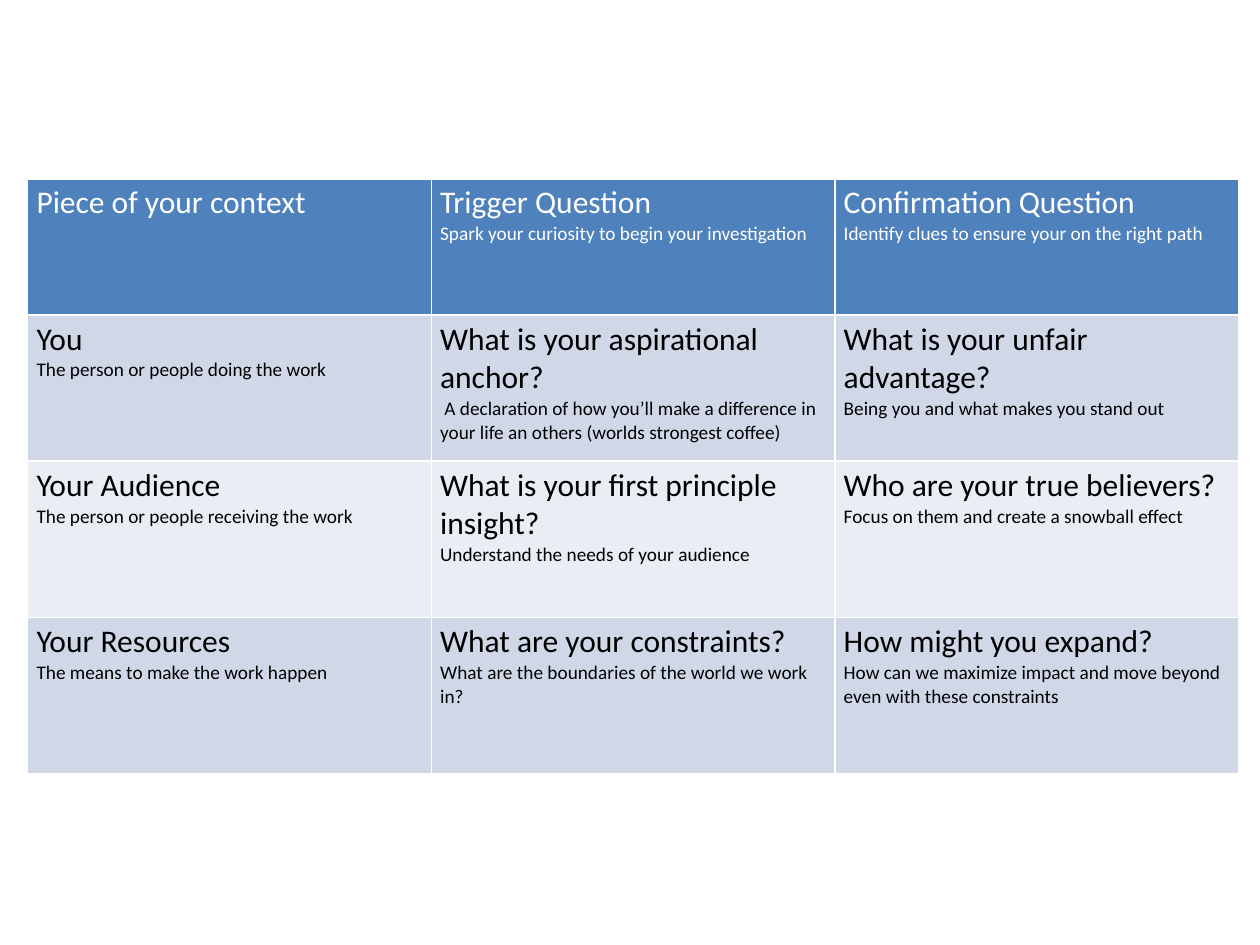
from lxml.etree import SubElement
from pptx import Presentation
from pptx.dml.color import RGBColor
from pptx.oxml.ns import qn
from pptx.util import Inches, Pt

HEAD, DARK, LIGHT = "4F81BD", "D0D8E8", "E9EDF4"
WHITE, BLACK = "FFFFFF", "000000"
ROWS = [
    (1.08, HEAD, WHITE, [
        ["Piece of your context"],
        ["Trigger Question", "Spark your curiosity to begin your investigation"],
        ["Confirmation Question", "Identify clues to ensure your on the right path"],
    ]),
    (1.16, DARK, BLACK, [
        ["You", "The person or people doing the work"],
        ["What is your aspirational anchor?",
         " A declaration of how you’ll make a difference in your life an others (worlds strongest coffee)"],
        ["What is your unfair advantage?", "Being you and what makes you stand out"],
    ]),
    (1.24, LIGHT, BLACK, [
        ["Your Audience", "The person or people receiving the work"],
        ["What is your first principle insight?", "Understand the needs of your audience"],
        ["Who are your true believers?", "Focus on them and create a snowball effect"],
    ]),
    (1.24, DARK, BLACK, [
        ["Your Resources", "The means to make the work happen"],
        ["What are your constraints?", "What are the boundaries of the world we work in?"],
        ["How might you expand?",
         "How can we maximize impact and move beyond even with these constraints"],
    ]),
]
MARGINS = {
    "margin_left": Inches(0.07), "margin_right": Inches(0.07),
    "margin_top": Inches(0.04), "margin_bottom": Inches(0.04),
}
SIZES = (18, 11)


def color(value):
    return RGBColor.from_string(value)


def apply(target, values):
    for name, value in values.items():
        setattr(target, name, value)


def add_lines(cell):
    props = cell._tc.get_or_add_tcPr()
    for side in "LRTB":
        line = SubElement(props, qn("a:ln" + side), w=str(Pt(1)))
        fill = SubElement(line, qn("a:solidFill"))
        SubElement(fill, qn("a:srgbClr"), val=WHITE)


def fill_cell(cell, texts, back, ink):
    apply(cell, MARGINS)
    add_lines(cell)
    cell.fill.solid()
    cell.fill.fore_color.rgb = color(back)
    frame = cell.text_frame
    frame.text = "\n".join(texts)
    for para, size in zip(frame.paragraphs, SIZES):
        font = para.runs[0].font
        apply(font, {"name": "Calibri", "size": Pt(size), "bold": False})
        font.color.rgb = color(ink)


def add_grid(slide, left, top, width, height):
    count = len(ROWS[0][3])
    table = slide.shapes.add_table(len(ROWS), count, left, top, width, height).table
    for column in table.columns:
        column.width = width // count
    for index, (tall, back, ink, cells) in enumerate(ROWS):
        table.rows[index].height = Inches(tall)
        for place, texts in enumerate(cells):
            fill_cell(table.cell(index, place), texts, back, ink)


def main():
    deck = Presentation()
    apply(deck, {"slide_width": Inches(10), "slide_height": Inches(7.5)})
    slide = deck.slides.add_slide(deck.slide_layouts[6])
    add_grid(slide, Inches(0.22), Inches(1.42), Inches(9.61), Inches(4.72))
    deck.save("out.pptx")


if __name__ == "__main__":
    main()
